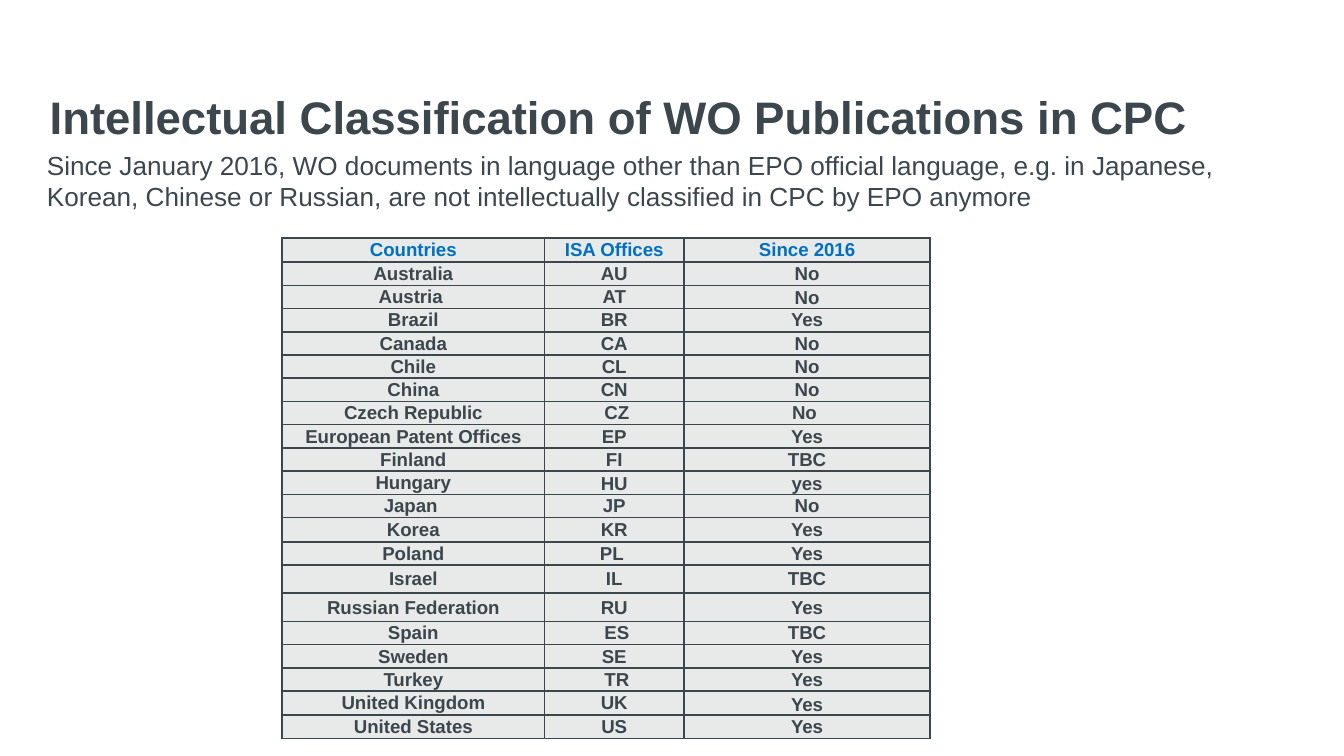
from lxml.etree import SubElement
from pptx import Presentation
from pptx.dml.color import RGBColor
from pptx.enum.text import MSO_ANCHOR, PP_ALIGN
from pptx.oxml.ns import qn
from pptx.util import Inches, Pt

INK = "3B464D"
BLUE = "0070C0"
CELL_GRAY = "E8E9E9"

ISA_OFFICES = [
    ("Countries", "ISA Offices", "Since 2016"),
    ("Australia", "AU", "No"),
    ("Austria ", "AT", "No"),
    ("Brazil", "BR", "Yes"),
    ("Canada", "CA", "No"),
    ("Chile", "CL", "No"),
    ("China", "CN", "No"),
    ("Czech Republic", " CZ", "No "),
    ("European Patent Offices", "EP", "Yes"),
    ("Finland", "FI", "TBC"),
    ("Hungary", "HU", "yes"),
    ("Japan ", "JP", "No"),
    ("Korea", "KR", "Yes"),
    ("Poland", "PL ", "Yes"),
    ("Israel", "IL", "TBC"),
    ("Russian Federation", "RU", "Yes"),
    ("Spain", " ES", "TBC"),
    ("Sweden", "SE", "Yes"),
    ("Turkey", " TR", "Yes"),
    ("United Kingdom", "UK", "Yes"),
    ("United States", "US", "Yes"),
]
COLUMN_WIDTHS = [1.95, 1.04, 1.83]
ROW_HEIGHT = 0.15
TALL_ROWS = {0: 0.18, 12: 0.18, 13: 0.17, 14: 0.21, 15: 0.21, 19: 0.18}
BOTTOM_CELLS = {(2, 2), (10, 1), (10, 2), (19, 2)}


def rgb(color):
    return RGBColor.from_string(color)


def style_font(p, size, color, bold=False):
    p.font.name = "Arial"
    p.font.size = Pt(size)
    p.font.bold = bold
    p.font.color.rgb = rgb(color)


def add_text(slide, text, left, top, width, height, size, bold=False):
    box = slide.shapes.add_textbox(
        Inches(left), Inches(top), Inches(width), Inches(height)
    )
    tf = box.text_frame
    tf.word_wrap = True
    p = tf.paragraphs[0]
    p.text = text
    style_font(p, size, INK, bold)
    return tf


def add_title(slide, text):
    tf = add_text(slide, text, 0.37, 0.37, 9.33, 0.7, 24.4, True)
    tf.vertical_anchor = MSO_ANCHOR.BOTTOM
    tf.margin_left = tf.margin_right = tf.margin_top = tf.margin_bottom = 0


def add_borders(cell, color, width):
    tc_pr = cell._tc.get_or_add_tcPr()
    for side in ("a:lnL", "a:lnR", "a:lnT", "a:lnB"):
        ln = SubElement(tc_pr, qn(side), w=str(Pt(width)))
        fill = SubElement(ln, qn("a:solidFill"))
        SubElement(fill, qn("a:srgbClr"), val=color)


def fill_cell(cell, text, color, anchor):
    add_borders(cell, INK, 1)
    cell.fill.solid()
    cell.fill.fore_color.rgb = rgb(CELL_GRAY)
    cell.margin_left = cell.margin_right = cell.margin_top = Pt(0.4)
    cell.margin_bottom = 0
    cell.vertical_anchor = anchor
    p = cell.text_frame.paragraphs[0]
    p.text = text
    p.alignment = PP_ALIGN.CENTER
    style_font(p, 10, color, True)


def add_office_table(slide, left, top):
    heights = [TALL_ROWS.get(i, ROW_HEIGHT) for i in range(len(ISA_OFFICES))]
    table = slide.shapes.add_table(
        len(heights), len(COLUMN_WIDTHS), Inches(left), Inches(top),
        Inches(sum(COLUMN_WIDTHS)), Inches(sum(heights)),
    ).table
    for column, width in zip(table.columns, COLUMN_WIDTHS):
        column.width = Inches(width)
    for i, (values, height) in enumerate(zip(ISA_OFFICES, heights)):
        table.rows[i].height = Inches(height)
        color = BLUE if i == 0 else INK
        for j, text in enumerate(values):
            at_bottom = (i, j) in BOTTOM_CELLS
            anchor = MSO_ANCHOR.BOTTOM if at_bottom else MSO_ANCHOR.MIDDLE
            fill_cell(table.cell(i, j), text, color, anchor)


def main():
    prs = Presentation()
    prs.slide_width = Inches(10)
    prs.slide_height = prs.slide_width * 9 // 16
    slide = prs.slides.add_slide(prs.slide_layouts[6])
    add_title(slide, "Intellectual Classification of WO Publications in CPC")
    add_text(
        slide,
        "Since January 2016, WO documents in language other than EPO official "
        "language, e.g. in Japanese, Korean, Chinese or Russian, are not "
        "intellectually classified in CPC by EPO anymore",
        0.25, 1.06, 9.45, 0.57, 14,
    )
    add_office_table(slide, 2.1, 1.77)
    prs.save("out.pptx")


if __name__ == "__main__":
    main()
